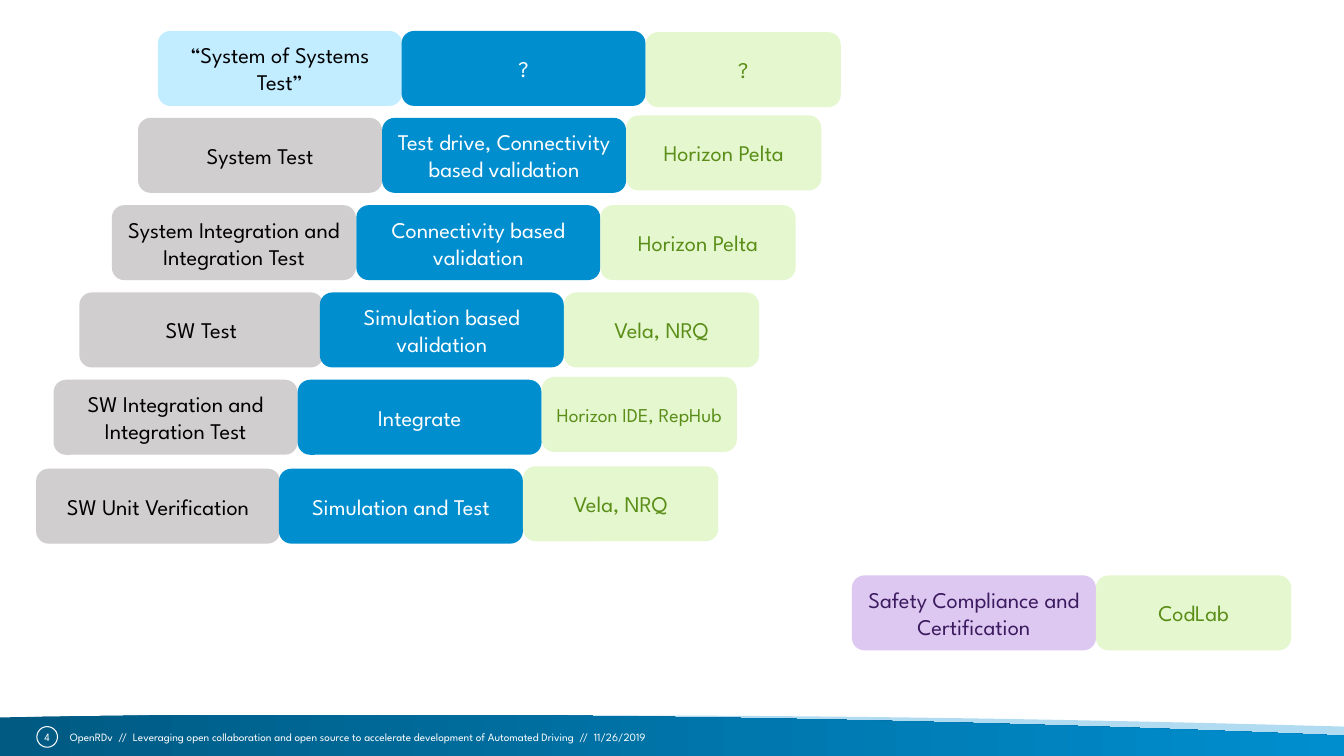
"""Build the slide of test levels, their methods and their tools."""
import lxml.etree
import pptx
import pptx.dml.color
import pptx.enum.shapes
import pptx.enum.text
import pptx.oxml.ns
import pptx.util

Cm = pptx.util.Cm
qn = pptx.oxml.ns.qn
FONT = "League Spartan"
PAGE_WIDTH, PAGE_HEIGHT = 33.87, 19.05
WIDE, NARROW, BOX_HEIGHT = 6.15, 4.92, 1.89

GREY = ("D0CECE", "000000")
SKY = ("C2ECFF", "000000")
BLUE = ("008ECF", "FFFFFF")
GREEN = ("E5F7CE", "5A8E18")
PURPLE = ("DCC8F0", "3C1A5F")

# top, level, level colours, level left, method, method left, tool, tool size, tool shift
ROWS = [
    (0.78, "“System of Systems\nTest”", SKY, 3.98, "?", 10.12, "?", 16, 0.03),
    (2.97, "System Test", GREY, 3.48, "Test drive, Connectivity based validation", 9.63,
     "Horizon Pelta", 16, -0.06),
    (5.17, "System Integration and Integration Test", GREY, 2.82,
     "Connectivity based validation", 8.98, "Horizon Pelta", 16, 0),
    (7.37, "SW Test", GREY, 2.0, "Simulation based validation", 8.06,
     "Vela, NRQ", 16, 0),
    (9.57, "SW Integration and Integration Test", GREY, 1.35, "Integrate", 7.5,
     "Horizon IDE, RepHub", 14, -0.07),
    (11.81, "SW Unit Verification", GREY, 0.91, "Simulation and Test", 7.03,
     "Vela, NRQ", 16, -0.06),
]
SAFETY = ("Safety Compliance and Certification", 21.47, 14.5)
SAFETY_TOOL = "CodLab"
FOOTER = ("OpenRDv  //  Leveraging open collaboration and open source to accelerate "
          "development of Automated Driving  //  11/26/2019")

PALE_WAVE = [(33.87, 18.31), (27.78, 18.14), (21.59, 18.03), (15.37, 18.03),
             (10.19, 18.03), (5.05, 18.11), (0, 18.21)]
DEEP_WAVE = [(33.87, 18.54), (25.58, 18.19), (17.15, 18.01), (8.61, 18.01),
             (5.72, 18.01), (2.84, 18.03), (0, 18.08)]


def colour(value):
    return pptx.dml.color.RGBColor.from_string(value)


def write(shape, text, size, ink, align=pptx.enum.text.PP_ALIGN.CENTER, wrap=True):
    frame = shape.text_frame
    frame.margin_left = frame.margin_right = frame.margin_top = frame.margin_bottom = 0
    frame.vertical_anchor = pptx.enum.text.MSO_ANCHOR.MIDDLE
    frame.word_wrap = wrap
    frame.text = text
    for para in frame.paragraphs:
        para.alignment = align
        for span in para.runs:
            span.font.name = FONT
            span.font.size = pptx.util.Pt(size)
            span.font.color.rgb = colour(ink)


def add_box(page, text, colours, left, top, width=WIDE, size=16):
    fill, ink = colours
    box = page.shapes.add_shape(pptx.enum.shapes.MSO_SHAPE.ROUNDED_RECTANGLE,
                                Cm(left), Cm(top), Cm(width), Cm(BOX_HEIGHT))
    box.shadow.inherit = False
    box.fill.solid()
    box.fill.fore_color.rgb = colour(fill)
    box.line.fill.background()
    write(box, text, size, ink)


def add_wave(page, crest):
    corners = [(0, PAGE_HEIGHT), (PAGE_WIDTH, PAGE_HEIGHT)]
    points = [(Cm(x), Cm(y)) for x, y in crest + corners]
    builder = page.shapes.build_freeform(*points[0], scale=1.0)
    builder.add_line_segments(points[1:], close=True)
    wave = builder.convert_to_shape()
    wave.shadow.inherit = False
    wave.line.fill.background()
    segments = list(wave._element.iter(qn("a:lnTo")))
    for first in range(0, len(crest) - 1, 3):
        start, *others = segments[first:first + 3]
        curve = lxml.etree.Element(qn("a:cubicBezTo"))
        start.addprevious(curve)
        for segment in (start, *others):
            curve.append(segment[0])
            segment.getparent().remove(segment)
    return wave


def add_footer(page):
    pale = add_wave(page, PALE_WAVE)
    pale.fill.solid()
    pale.fill.fore_color.rgb = colour("008ECF")
    tint = pale._element.spPr.find(".//" + qn("a:srgbClr"))
    lxml.etree.SubElement(tint, qn("a:alpha"), val="31000")

    deep = add_wave(page, DEEP_WAVE)
    deep.fill.gradient()
    deep.fill.gradient_angle = 0
    for stop, value, place in zip(deep.fill.gradient_stops, ("005A82", "008ECF"), (0, 1)):
        stop.color.rgb = colour(value)
        stop.position = place

    number = page.shapes.add_textbox(Cm(0.93), Cm(18.4), Cm(0.52), Cm(0.33))
    write(number, "4", 8, "FFFFFF", wrap=False)
    ring = page.shapes.add_shape(pptx.enum.shapes.MSO_SHAPE.OVAL,
                                 Cm(0.93), Cm(18.31), Cm(0.52), Cm(0.52))
    ring.shadow.inherit = False
    ring.fill.background()
    ring.line.color.rgb = colour("FFFFFF")
    ring.line.width = pptx.util.Pt(0.75)
    caption = page.shapes.add_textbox(Cm(1.76), Cm(18.4), Cm(17.9), Cm(0.33))
    write(caption, FOOTER, 8, "FFFFFF", pptx.enum.text.PP_ALIGN.LEFT, wrap=False)


def main():
    deck = pptx.Presentation()
    deck.slide_width, deck.slide_height = Cm(PAGE_WIDTH), Cm(PAGE_HEIGHT)
    page = deck.slides.add_slide(deck.slide_layouts[6])
    add_footer(page)
    for top, level, colours, left, method, method_left, tool, size, shift in ROWS:
        add_box(page, level, colours, left, top)
        add_box(page, method, BLUE, method_left, top)
        add_box(page, tool, GREEN, method_left + WIDE, top + shift, NARROW, size)
    text, left, top = SAFETY
    add_box(page, text, PURPLE, left, top)
    add_box(page, SAFETY_TOOL, GREEN, left + WIDE, top, NARROW)
    deck.save("out.pptx")


if __name__ == "__main__":
    main()
